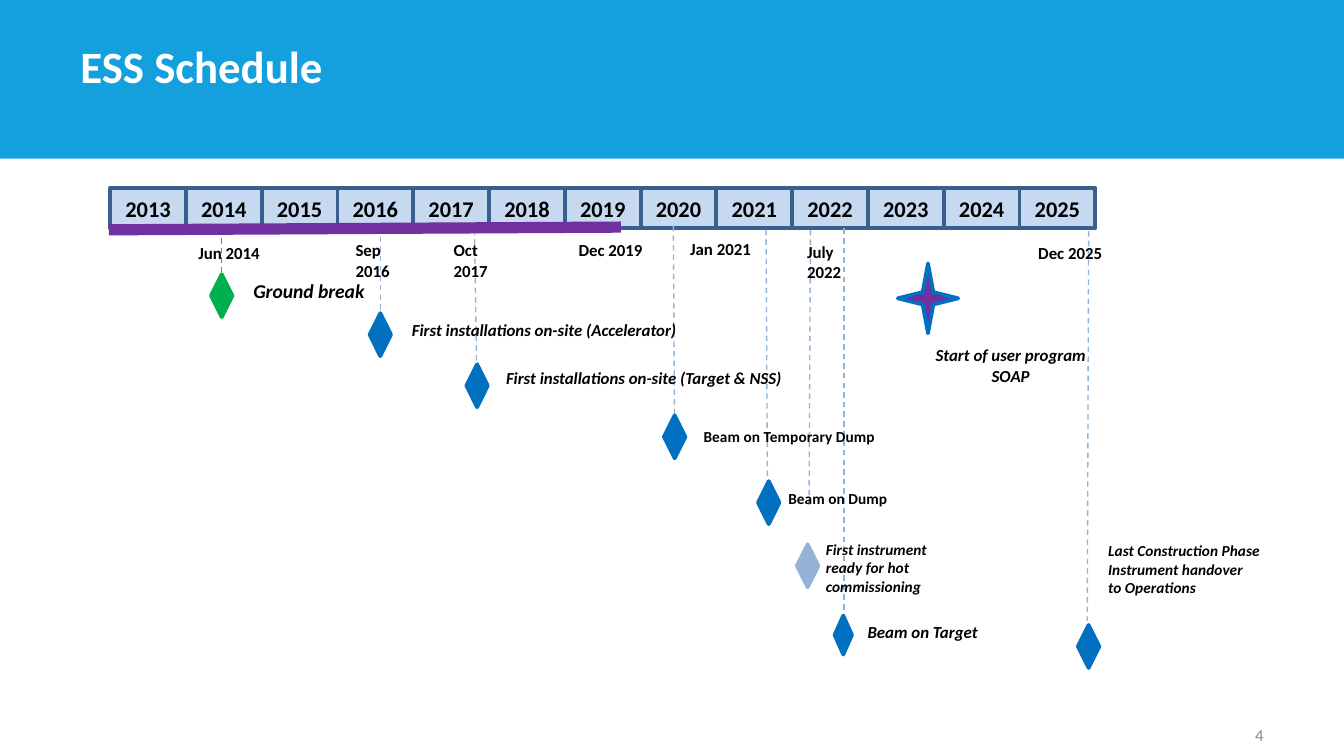
from dataclasses import dataclass
from pptx import Presentation
from pptx.dml.color import RGBColor
from pptx.enum.dml import MSO_LINE
from pptx.enum.shapes import MSO_CONNECTOR, MSO_SHAPE
from pptx.enum.text import MSO_ANCHOR, MSO_AUTO_SIZE, PP_ALIGN
from pptx.oxml.ns import qn
from pptx.util import Inches, Pt


@dataclass(frozen=True)
class Theme:
    font: str = "Calibri"
    banner: str = "13A0DD"
    white: str = "FFFFFF"
    black: str = "000000"
    muted: str = "8C8C8C"
    year_fill: str = "C6D9F1"
    year_line: str = "3A5F8C"
    guide: str = "95B3D7"
    first_guide: str = "4F81BD"
    progress: str = "7030A0"
    done: str = "00B050"
    planned: str = "0070C0"
    title: float = 24
    year: float = 12
    lead: float = 10.5
    label: float = 9
    small: float = 8.25


T = Theme()

GUIDES = [
    (0.85, 0, 0.85, 0.52, T.first_guide),
    (2.03, -0.01, 2.03, 0.76, T.guide),
    (2.73, 0.01, 2.75, 1.23, T.guide),
    (4.21, -0.02, 4.22, 1.57, T.guide),
    (4.9, 0.01, 4.91, 1.9, T.guide),
    (5.23, 0.01, 5.22, 2.08, T.guide),
    (5.48, 0, 5.48, 2.86, T.guide),
    (7.3, 0.02, 7.29, 2.92, T.guide),
]
DATES = [
    ("Jun 2014", 0.6, 0.07, 0.61),
    ("Sep 2016", 1.77, 0.05, 0.62),
    ("Oct 2017", 2.5, 0.05, 0.61),
    ("Dec 2019", 3.43, 0.05, 0.63),
    ("Jan 2021", 4.26, 0.04, 0.61),
    ("July 2022", 5.13, 0.06, 0.63),
    ("Dec 2025", 6.85, 0.07, 0.63),
]
DIAMONDS = [
    (0.77, 0.34, 0.16, 0.32, T.done),
    (1.95, 0.63, 0.16, 0.32, T.planned),
    (2.67, 1.01, 0.16, 0.32, T.planned),
    (4.14, 1.39, 0.16, 0.32, T.planned),
    (4.84, 1.88, 0.16, 0.32, T.planned),
    (5.13, 2.35, 0.16, 0.32, T.guide),
    (5.41, 2.88, 0.13, 0.29, T.planned),
    (7.22, 2.95, 0.16, 0.32, T.planned),
]
LABELS = [
    ("Ground break", 1.01, 0.34, 1.02, 0.25, dict(size=T.lead, italic=True)),
    ("First installations on-site (Accelerator)", 2.19, 0.64, 2.14, 0.23, dict(italic=True)),
    ("First installations on-site (Target & NSS)", 2.89, 1, 2.23, 0.23, dict(italic=True)),
    ("Beam on Temporary Dump", 4.36, 1.44, 1.45, 0.21, dict(size=T.small)),
    ("Beam on Dump", 4.99, 1.9, 0.89, 0.21, dict(size=T.small)),
    ("First instrument \vready for hot commissioning", 5.27, 2.28, 1.47, 0.49,
     dict(size=T.small, italic=True, wrap=True)),
    ("Beam on Target", 5.58, 2.89, 0.99, 0.23, dict(italic=True)),
    ("Last Construction Phase\nInstrument handover\nto Operations", 7.37, 2.29, 1.48, 0.49,
     dict(size=T.small, italic=True, wrap=True)),
    ("Start of user program\nSOAP", 6.08, 0.83, 1.28, 0.38,
     dict(italic=True, align=PP_ALIGN.CENTER)),
]


def rgb(color):
    return RGBColor.from_string(color)


def write(sp, text, size=T.label, color=T.black, bold=True, italic=False,
          align=PP_ALIGN.LEFT, anchor=MSO_ANCHOR.TOP, wrap=True, inset=(7.2, 3.6)):
    tf = sp.text_frame
    tf.word_wrap = wrap
    tf.vertical_anchor = anchor
    tf.margin_left = tf.margin_right = Pt(inset[0])
    tf.margin_top = tf.margin_bottom = Pt(inset[1])
    tf.text = text
    for p in tf.paragraphs:
        p.alignment = align
        for r in p.runs:
            r.font.name, r.font.size = T.font, Pt(size)
            r.font.bold, r.font.italic = bold, italic
            r.font.color.rgb = rgb(color)


def add_text(s, text, x, y, w, h, **style):
    sp = s.shapes.add_textbox(Inches(x), Inches(y), Inches(w), Inches(h))
    write(sp, text, **style)
    return sp


def add_label(s, text, x, y, w, h, **style):
    sp = add_text(s, text, x, y, w, h, **{"wrap": False, "inset": (5.4, 2.7), **style})
    sp.text_frame.auto_size = MSO_AUTO_SIZE.SHAPE_TO_FIT_TEXT


def add_shape(s, kind, x, y, w, h, fill, line=None):
    sp = s.shapes.add_shape(kind, Inches(x), Inches(y), Inches(w), Inches(h))
    sp.shadow.inherit = False
    sp.fill.solid()
    sp.fill.fore_color.rgb = rgb(fill)
    if line:
        sp.line.color.rgb = rgb(line)
        sp.line.width = Pt(2)
    else:
        sp.line.fill.background()
    return sp


def add_line(s, x1, y1, x2, y2, color, width=0.75, dash=None):
    ln = s.shapes.add_connector(
        MSO_CONNECTOR.STRAIGHT, Inches(x1), Inches(y1), Inches(x2), Inches(y2))
    ln.line.color.rgb = rgb(color)
    ln.line.width = Pt(width)
    if dash:
        ln.line.dash_style = dash
    sp_pr = ln._element.spPr
    sp_pr.append(sp_pr.makeelement(qn("a:effectLst"), {}))


def header(s, x, y, w, h):
    add_shape(s, MSO_SHAPE.RECTANGLE, x, y, w, h, T.banner)
    add_text(s, "ESS Schedule", x + 0.5, y + 0.28, 7.81, 0.46, size=T.title,
             color=T.white, anchor=MSO_ANCHOR.BOTTOM)


def year_bar(s, x, y, w, h, first=2013, last=2025):
    step = w / (last - first + 1)
    for i, year in enumerate(range(first, last + 1)):
        sp = add_shape(s, MSO_SHAPE.RECTANGLE, x + i * step, y, step, h,
                       T.year_fill, T.year_line)
        write(sp, str(year), size=T.year, align=PP_ALIGN.CENTER,
              anchor=MSO_ANCHOR.MIDDLE, inset=(0, 0))


def milestones(s, x, y):
    for x1, y1, x2, y2, color in GUIDES:
        add_line(s, x + x1, y + y1, x + x2, y + y2, color, dash=MSO_LINE.DASH)
    add_line(s, x + 0.01, y + 0.01, x + 3.82, y - 0.01, T.progress, width=6)
    for text, dx, dy, w in DATES:
        add_label(s, text, x + dx, y + dy, w, 0.23)
    for dx, dy, w, h, color in DIAMONDS:
        add_shape(s, MSO_SHAPE.DIAMOND, x + dx, y + dy, w, h, color, color)
    add_shape(s, MSO_SHAPE.STAR_4_POINT, x + 5.88, y + 0.26, 0.45, 0.52,
              T.progress, T.planned)
    for text, dx, dy, w, h, style in LABELS:
        add_label(s, text, x + dx, y + dy, w, h, **style)


def page_number(s, x, y, w, h):
    add_text(s, "4", x, y, w, h, color=T.muted, bold=False,
             align=PP_ALIGN.RIGHT, anchor=MSO_ANCHOR.BOTTOM)


def main():
    prs = Presentation()
    prs.slide_width, prs.slide_height = Inches(10), Inches(10 * 9 / 16)
    s = prs.slides.add_slide(prs.slide_layouts[6])
    header(s, 0, 0, 10, 1.18)
    year_bar(s, 0.82, 1.4, 7.33, 0.3)
    milestones(s, 0.8, 1.7)
    page_number(s, 7.17, 5.29, 2.33, 0.3)
    prs.save("out.pptx")


if __name__ == "__main__":
    main()
